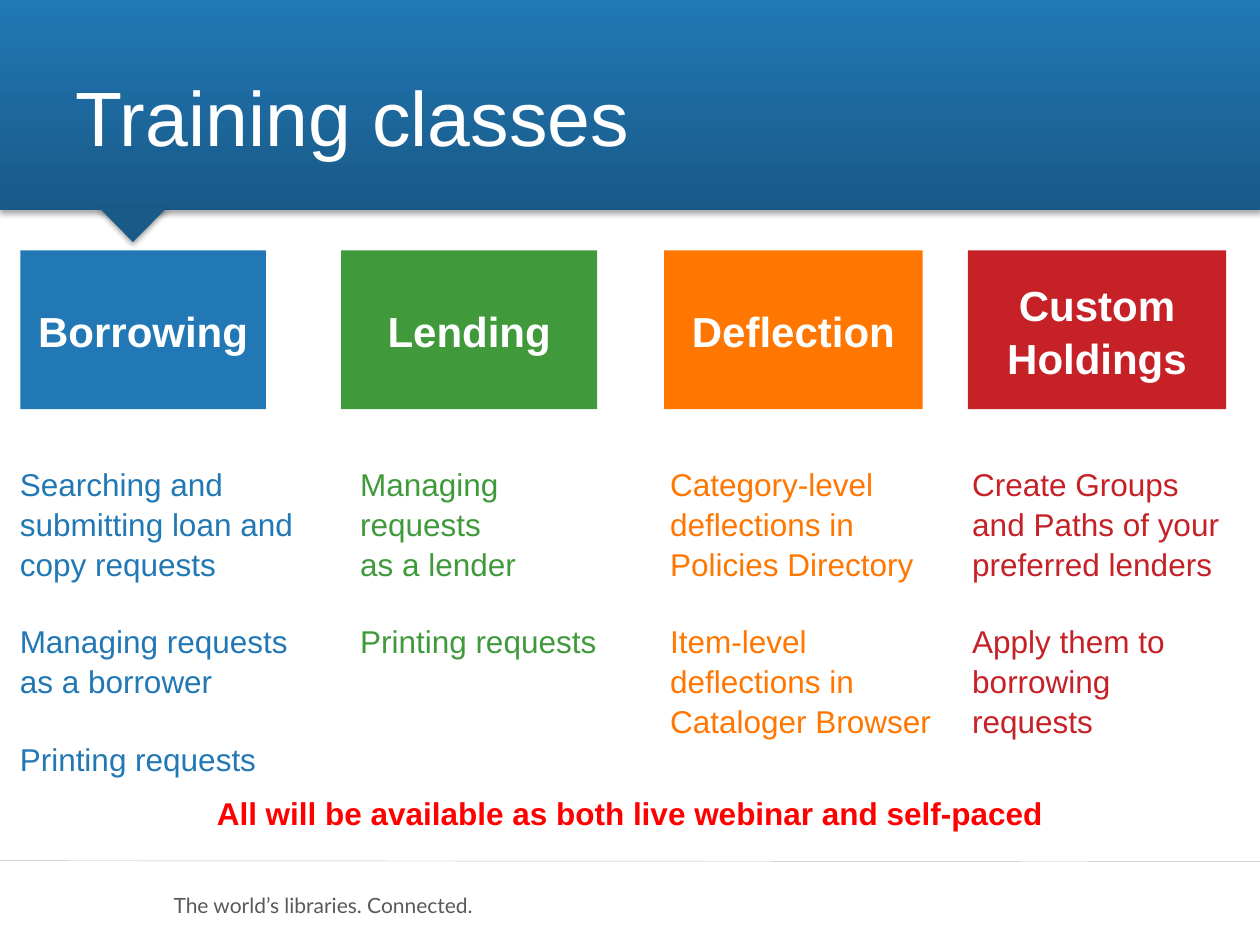
"""Build the training classes slide."""
from lxml import etree
from pptx import Presentation
from pptx.dml.color import RGBColor
from pptx.enum.shapes import MSO_CONNECTOR, MSO_SHAPE
from pptx.enum.text import MSO_ANCHOR, MSO_AUTO_SIZE, PP_ALIGN
from pptx.oxml.ns import qn
from pptx.util import Cm, Pt

RECT, TRIANGLE = MSO_SHAPE.RECTANGLE, MSO_SHAPE.ISOSCELES_TRIANGLE
STRAIGHT = MSO_CONNECTOR.STRAIGHT
TOP, MIDDLE = MSO_ANCHOR.TOP, MSO_ANCHOR.MIDDLE
LEFT, CENTER = PP_ALIGN.LEFT, PP_ALIGN.CENTER
NO_FIT = MSO_AUTO_SIZE.NONE

BLUE = RGBColor(0x21, 0x78, 0xB5)
NAVY = RGBColor(0x19, 0x5A, 0x88)
GREEN = RGBColor(0x40, 0x9A, 0x3C)
ORANGE = RGBColor(0xFF, 0x76, 0x00)
CRIMSON = RGBColor(0xC5, 0x21, 0x27)
RED = RGBColor(0xFF, 0x00, 0x00)
WHITE = RGBColor(0xFF, 0xFF, 0xFF)
GREY = RGBColor(0x59, 0x59, 0x59)
RULE = RGBColor(0xBF, 0xBF, 0xBF)

HEAD_TOP, HEAD_HEIGHT = 5.05, 3.2
BODY_TOP, BODY_HEIGHT = 9.22, 6.63

COLUMNS = [
    ("Borrowing", BLUE, 0.41, 4.95, 0.15, 6.45,
     ["Searching and\vsubmitting loan and copy requests",
      "Managing requests\vas a borrower", "Printing requests"]),
    ("Lending", GREEN, 6.88, 5.16, 7.01, 5.82,
     ["Managing requests\vas a lender", "Printing requests"]),
    ("Deflection", ORANGE, 13.39, 5.21, 13.26, 5.82,
     ["Category-level deflections in Policies Directory",
      "Item-level deflections in Cataloger Browser"]),
    ("Custom Holdings", CRIMSON, 19.51, 5.21, 19.35, 5.82,
     ["Create Groups and Paths of your preferred lenders",
      "Apply them to borrowing requests"]),
]


class Deck:
    """Hold the text style and the current slide."""

    font = "Arial"
    spacing = 1.05
    gap = Pt(21.7)

    def __init__(self, prs):
        self.slide = prs.slides.add_slide(prs.slide_layouts[5])
        self.shapes = self.slide.shapes

    def set_text(self, sp, lines, size, color, bold=False, align=LEFT,
                 anchor=TOP, font=None, spacing=None):
        tf = sp.text_frame
        tf.word_wrap = True
        tf.auto_size = NO_FIT
        tf.vertical_anchor = anchor
        for i, line in enumerate(lines):
            p = tf.add_paragraph() if i else tf.paragraphs[0]
            p.text = line
            p.alignment = align
            p.line_spacing = spacing or self.spacing
            p.space_before = self.gap if i else Pt(0)
            p.font.name = font or self.font
            p.font.size = Pt(size)
            p.font.bold = bold
            p.font.color.rgb = color

    def title(self, text, x, y, w, h):
        sp = self.shapes.title
        sp.left, sp.top, sp.width, sp.height = Cm(x), Cm(y), Cm(w), Cm(h)
        self.set_text(sp, [text], 44, WHITE, anchor=MIDDLE, spacing=1.0)
        self.shapes._spTree.append(sp._element)

    def text(self, lines, x, y, w, h, size, color, **style):
        sp = self.shapes.add_textbox(Cm(x), Cm(y), Cm(w), Cm(h))
        self.set_text(sp, lines, size, color, **style)

    def shape(self, kind, x, y, w, h, color):
        sp = self.shapes.add_shape(kind, Cm(x), Cm(y), Cm(w), Cm(h))
        sp.shadow.inherit = False
        sp.fill.solid()
        sp.fill.fore_color.rgb = color
        sp.line.fill.background()
        return sp

    def shade(self, sp):
        effects = sp._element.spPr.find(qn("a:effectLst"))
        shadow = etree.SubElement(effects, qn("a:outerShdw"), blurRad="39370",
                                  dist="22860", dir="5400000", rotWithShape="0")
        color = etree.SubElement(shadow, qn("a:srgbClr"), val="000000")
        etree.SubElement(color, qn("a:alpha"), val="35000")

    def banner(self, w, h):
        band = self.shape(RECT, 0, 0, w, h, BLUE)
        band.fill.gradient()
        band.fill.gradient_angle = 90
        for stop, color in zip(band.fill.gradient_stops, (NAVY, BLUE)):
            stop.color.rgb = color
        pointer = self.shape(TRIANGLE, 1.98, 4.17, 1.4, 0.71, NAVY)
        pointer.rotation = 180
        for sp in (band, pointer):
            self.shade(sp)

    def rule(self, x1, y1, x2, y2):
        line = self.shapes.add_connector(STRAIGHT, Cm(x1), Cm(y1), Cm(x2), Cm(y2))
        line.line.color.rgb = RULE
        line.line.width = Pt(0.25)
        etree.SubElement(line._element.spPr, qn("a:effectLst"))

    def column(self, head, color, x, w, body_x, body_w, lines):
        sp = self.shape(RECT, x, HEAD_TOP, w, HEAD_HEIGHT, color)
        self.set_text(sp, [head], 24, WHITE, bold=True, align=CENTER, anchor=MIDDLE)
        self.text(lines, body_x, BODY_TOP, body_w, BODY_HEIGHT, 18, color)


def main():
    prs = Presentation()
    prs.slide_width, prs.slide_height = Cm(25.4), Cm(19.05)
    deck = Deck(prs)
    deck.text(["The world’s libraries. Connected."], 3.25, 17.86, 7.14, 0.76,
              12, GREY, anchor=MIDDLE, font="Lato", spacing=1.0)
    deck.rule(0, 17.35, 25.4, 17.37)
    deck.banner(25.4, 4.24)
    deck.title("Training classes", 1.27, 1.07, 22.86, 2.54)
    for column in COLUMNS:
        deck.column(*column)
    deck.text(["All will be available as both live webinar and self-paced"],
              1.27, 15.85, 22.86, 1.8, 18, RED, bold=True, align=CENTER)
    prs.save("out.pptx")


if __name__ == "__main__":
    main()
